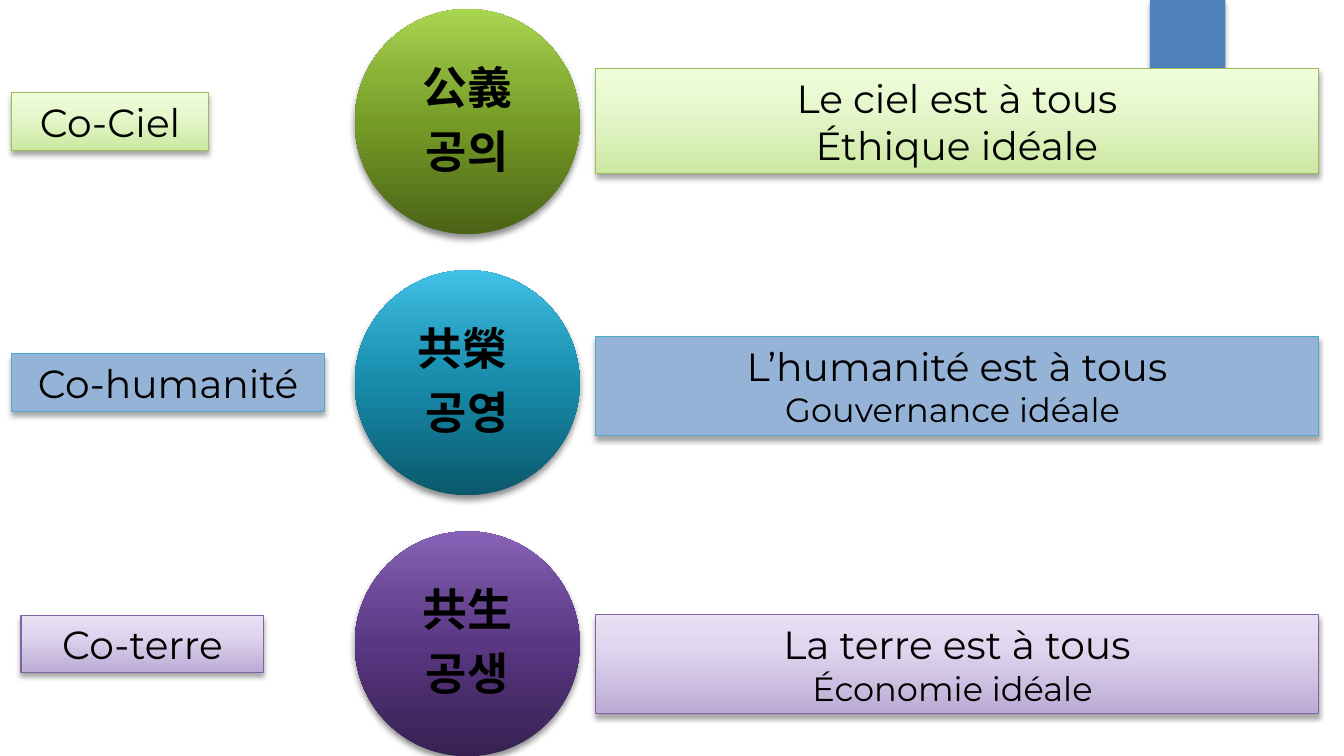
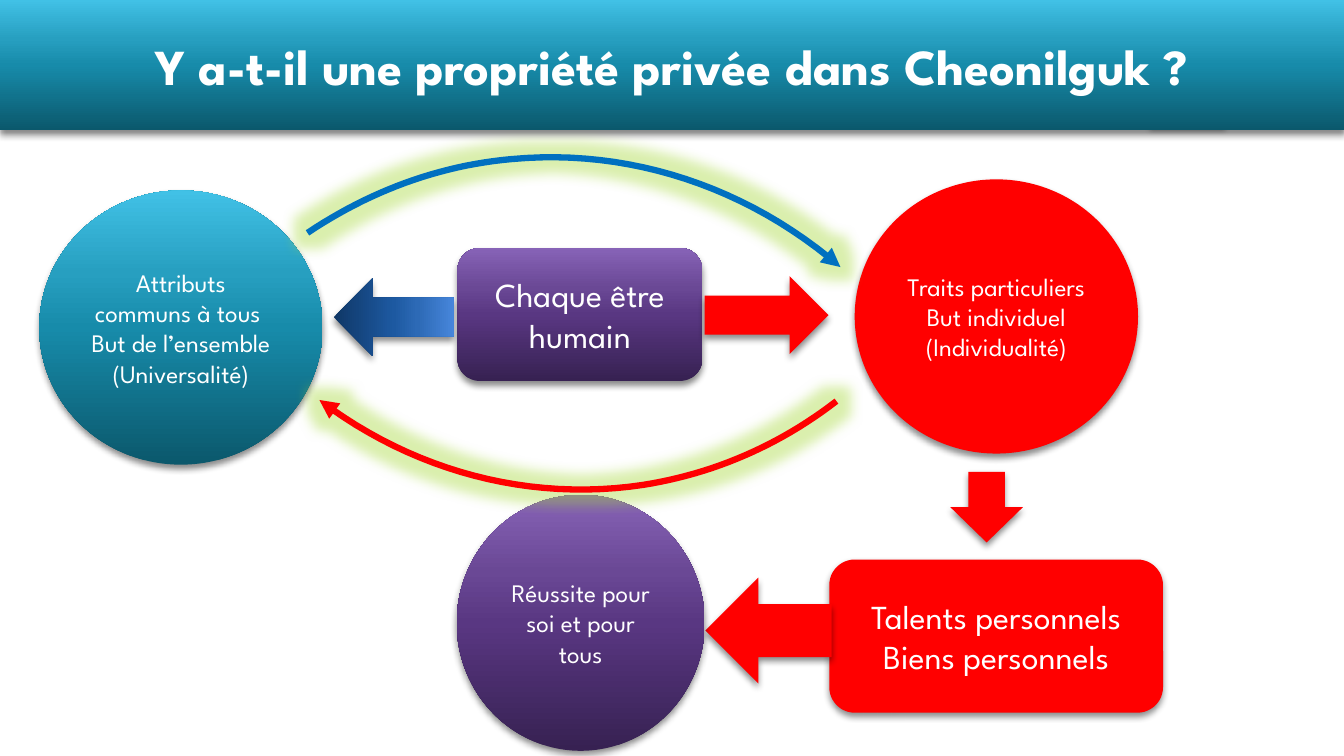
from dataclasses import dataclass
from typing import Optional, Union

import lxml.etree
import pptx
import pptx.dml.color
import pptx.enum.shapes
import pptx.enum.text
import pptx.oxml.ns
import pptx.util

Cm = pptx.util.Cm
Pt = pptx.util.Pt
qn = pptx.oxml.ns.qn
MSO_SHAPE = pptx.enum.shapes.MSO_SHAPE
Stops = tuple[tuple[int, str], ...]
Fill = Union[str, Stops]
Point = tuple[float, float]


@dataclass(frozen=True)
class Theme:
    heading: str = "League Spartan"
    body: str = "Montserrat"
    black: str = "000000"
    white: str = "FFFFFF"
    red: str = "FF0000"
    blue: str = "0070C0"
    tab: str = "4F81BD"
    sky: str = "95B3D7"
    glow: str = "A3D733"
    green_line: str = "9BBB59"
    teal_line: str = "4BACC6"
    purple_line: str = "8064A2"
    pale_green: Stops = ((0, "CCE8A2"), (65, "E7F8CF"), (100, "EFFDDB"))
    pale_purple: Stops = ((0, "BCABD5"), (65, "DFD5EE"), (100, "E8E0F4"))
    green: Stops = ((0, "4A6316"), (50, "769C27"), (70, "89B137"), (100, "A9D651"))
    teal: Stops = ((0, "0B586C"), (50, "178BAA"), (70, "279FC0"), (100, "41C1E6"))
    purple: Stops = ((0, "372152"), (50, "593782"), (70, "6A4895"), (100, "8763B7"))
    navy: Stops = ((0, "0F3766"), (50, "1D59A1"), (70, "2D6AB6"), (100, "4786DB"))
    title: int = 36
    emblem: int = 32
    large: int = 28
    medium: int = 24
    small: int = 18


T = Theme()


@dataclass(frozen=True)
class Box:
    left: float
    top: float
    width: float
    height: float


@dataclass(frozen=True)
class Line:
    text: str
    size: int


@dataclass(frozen=True)
class Row:
    emblem: tuple[str, str]
    emblem_fill: Stops
    label: str
    label_left: float
    label_width: float
    band_top: float
    band_height: float
    band: tuple[Line, Line]
    fill: Fill
    line: str


@dataclass(frozen=True)
class Node:
    kind: MSO_SHAPE
    box: Box
    fill: Fill
    lines: tuple[str, ...] = ()
    size: int = T.small
    rotation: int = 0


@dataclass(frozen=True)
class Curve:
    points: tuple[Point, ...]
    color: str


ROWS = (
    Row(("公義", "공의"), T.green, "Co-Ciel", 0.3, 4.95, 1.73, 2.64,
        (Line("Le ciel est à tous", T.large), Line("Éthique idéale", T.large)),
        T.pale_green, T.green_line),
    Row(("共榮 ", "공영"), T.teal, "Co-humanité", 0.3, 7.87, 8.48, 2.49,
        (Line("L’humanité est à tous", T.large), Line("Gouvernance idéale ", T.medium)),
        T.sky, T.teal_line),
    Row(("共生", "공생"), T.purple, "Co-terre", 0.53, 6.12, 15.49, 2.49,
        (Line("La terre est à tous", T.large), Line("Économie idéale ", T.medium)),
        T.pale_purple, T.purple_line),
)
ROW_TOP, ROW_PITCH = 0.23, 6.58
EMBLEM_LEFT, EMBLEM_SIZE = 8.94, 5.67
LABEL_DROP, LABEL_HEIGHT = 2.11, 1.45
BAND_LEFT, BAND_WIDTH = 15.01, 18.21

DIAGRAM = (
    Node(MSO_SHAPE.OVAL, Box(0.99, 4.8, 7.14, 6.91), T.teal,
         ("Attributs communs à tous ", "But de l’ensemble", "(Universalité)")),
    Node(MSO_SHAPE.OVAL, Box(21.54, 4.52, 7.14, 6.91), T.red,
         ("Traits particuliers", "But individuel", "(Individualité)")),
    Curve(((7.75, 5.87), (9.3, 4.83), (11.05, 4.17), (12.9, 4.01),
           (15.88, 3.73), (18.85, 4.72), (21.18, 6.73)), T.blue),
    Node(MSO_SHAPE.DOWN_ARROW, Box(23.95, 11.89, 1.83, 1.78), T.red),
    Node(MSO_SHAPE.ROUNDED_RECTANGLE, Box(20.9, 14.1, 8.41, 3.86), T.red,
         ("Talents personnels", "Biens personnels"), T.medium),
    Node(MSO_SHAPE.DOWN_ARROW, Box(18.03, 14.3, 2.67, 3.18), T.red, rotation=90),
    Node(MSO_SHAPE.OVAL, Box(11.51, 12.47, 6.25, 6.45), T.purple,
         ("Réussite pour soi et pour tous",)),
    Node(MSO_SHAPE.ROUNDED_RECTANGLE, Box(11.53, 6.25, 6.17, 3.35), T.purple,
         ("Chaque être humain",), T.medium),
    Curve(((21.08, 10.11), (19.63, 11.23), (17.98, 11.94), (16.21, 12.22),
           (13.36, 12.65), (10.44, 11.89), (8.05, 10.08)), T.red),
    Node(MSO_SHAPE.DOWN_ARROW, Box(18.34, 6.38, 1.96, 3.12), T.red, rotation=270),
    Node(MSO_SHAPE.DOWN_ARROW, Box(8.94, 6.48, 1.96, 3.02), T.navy, rotation=90),
)


def rgb(color: str) -> pptx.dml.color.RGBColor:
    return pptx.dml.color.RGBColor.from_string(color)


def add_color(parent, color: str, alpha: int = 100) -> None:
    clr = lxml.etree.SubElement(parent, qn("a:srgbClr"), val=color)
    if alpha < 100:
        lxml.etree.SubElement(clr, qn("a:alpha"), val=str(alpha * 1000))


def set_fill(sp, fill: Fill) -> None:
    if isinstance(fill, str):
        sp.fill.solid()
        sp.fill.fore_color.rgb = rgb(fill)
        return
    sp.fill.gradient()
    sp.fill.gradient_angle = 90
    stops = next(sp.element.spPr.iter(qn("a:gsLst")))
    for stop in list(stops):
        stops.remove(stop)
    for pos, color in fill:
        add_color(lxml.etree.SubElement(stops, qn("a:gs"), pos=str(pos * 1000)), color)


def add_effect(sp, tag: str, color: str, alpha: int, **attrs: str) -> None:
    sp.shadow.inherit = False
    effects = sp.element.spPr.find(qn("a:effectLst"))
    add_color(lxml.etree.SubElement(effects, qn(tag), **attrs), color, alpha)


def decorate(sp, box: Box, fill: Fill, line: Optional[str] = None, strong: bool = True) -> None:
    sp.left, sp.top = Cm(box.left), Cm(box.top)
    sp.width, sp.height = Cm(box.width), Cm(box.height)
    set_fill(sp, fill)
    if line:
        sp.line.color.rgb = rgb(line)
        sp.line.width = Pt(0.75)
    else:
        sp.line.fill.background()
    blur, alpha = (5, 45) if strong else (4, 35)
    add_effect(sp, "a:outerShdw", T.black, alpha, blurRad=str(Pt(blur)),
               dist=str(Pt(3)), dir="5400000", algn="ctr", rotWithShape="0")


def add_box(slide, kind: MSO_SHAPE, box: Box, fill: Fill, line: Optional[str] = None,
            strong: bool = True):
    sp = slide.shapes.add_shape(kind, 0, 0, Cm(1), Cm(1))
    decorate(sp, box, fill, line, strong)
    return sp


def write(sp, lines: tuple[Line, ...], font: str, color: str, bold: bool = False) -> None:
    tf = sp.text_frame
    tf.word_wrap = True
    tf.vertical_anchor = pptx.enum.text.MSO_ANCHOR.MIDDLE
    for i, line in enumerate(lines):
        p = tf.add_paragraph() if i else tf.paragraphs[0]
        p.text = line.text
        p.alignment = pptx.enum.text.PP_ALIGN.CENTER
        p.font.name = font
        p.font.size = Pt(line.size)
        p.font.bold = bold
        p.font.color.rgb = rgb(color)


def add_panel(slide, box: Box, row: Row, lines: tuple[Line, ...]) -> None:
    sp = add_box(slide, MSO_SHAPE.RECTANGLE, box, row.fill, row.line, strong=False)
    write(sp, lines, T.body, T.black)
    sp.text_frame.auto_size = pptx.enum.text.MSO_AUTO_SIZE.SHAPE_TO_FIT_TEXT


def add_emblem(slide, box: Box, row: Row) -> None:
    sp = add_box(slide, MSO_SHAPE.OVAL, box, row.emblem_fill)
    write(sp, tuple(Line(text, T.emblem) for text in row.emblem), T.heading, T.black, True)
    tf = sp.text_frame
    tf.margin_left = tf.margin_right = tf.margin_top = tf.margin_bottom = Cm(0.1)
    for p in tf.paragraphs:
        p.line_spacing = 0.9
        p.space_after = Pt(11)


def add_row(slide, index: int, row: Row) -> None:
    top = ROW_TOP + index * ROW_PITCH
    add_panel(slide, Box(BAND_LEFT, row.band_top, BAND_WIDTH, row.band_height), row, row.band)
    add_emblem(slide, Box(EMBLEM_LEFT, top, EMBLEM_SIZE, EMBLEM_SIZE), row)
    add_panel(slide, Box(row.label_left, top + LABEL_DROP, row.label_width, LABEL_HEIGHT),
              row, (Line(row.label, T.large),))


def add_node(slide, node: Node) -> None:
    sp = add_box(slide, node.kind, node.box, node.fill)
    sp.rotation = node.rotation
    if node.lines:
        write(sp, tuple(Line(text, node.size) for text in node.lines), T.heading, T.white)


def bezier(a: Point, b: Point, c: Point, d: Point, t: float) -> Point:
    u = 1 - t
    weights = (u ** 3, 3 * u * u * t, 3 * u * t * t, t ** 3)
    x, y = (sum(w * v for w, v in zip(weights, axis)) for axis in zip(a, b, c, d))
    return Cm(x), Cm(y)


def add_curve(slide, curve: Curve, steps: int = 24) -> None:
    pts = curve.points
    trail = [bezier(*pts[i:i + 4], k / steps)
             for i in range(0, len(pts) - 1, 3) for k in range(1, steps + 1)]
    builder = slide.shapes.build_freeform(Cm(pts[0][0]), Cm(pts[0][1]))
    builder.add_line_segments(trail, close=False)
    sp = builder.convert_to_shape()
    sp.fill.background()
    sp.line.color.rgb = rgb(curve.color)
    sp.line.width = Pt(4.5)
    lxml.etree.SubElement(sp.element.spPr.find(qn("a:ln")), qn("a:tailEnd"), type="triangle")
    add_effect(sp, "a:glow", T.glow, 40, rad=str(Pt(18)))


def add_master_tab(prs, slide) -> None:
    sp = add_box(slide, MSO_SHAPE.RECTANGLE, Box(28.98, 0, 1.9, 3.18), T.tab, strong=False)
    prs.slide_master.element.cSld.spTree.append(sp.element)


def add_title(slide, text: str) -> None:
    sp = slide.shapes.title
    decorate(sp, Box(0, 0, 33.87, 3.28), T.teal)
    write(sp, (Line(text, T.title),), T.heading, T.white, True)


def main() -> None:
    prs = pptx.Presentation()
    prs.slide_width, prs.slide_height = Cm(33.87), Cm(19.05)

    slide = prs.slides.add_slide(prs.slide_layouts[6])
    add_master_tab(prs, slide)
    for index, row in enumerate(ROWS):
        add_row(slide, index, row)

    slide = prs.slides.add_slide(prs.slide_layouts[5])
    add_title(slide, "Y a-t-il une propriété privée dans Cheonilguk ?")
    for item in DIAGRAM:
        if isinstance(item, Curve):
            add_curve(slide, item)
        else:
            add_node(slide, item)

    prs.save("out.pptx")


if __name__ == "__main__":
    main()
